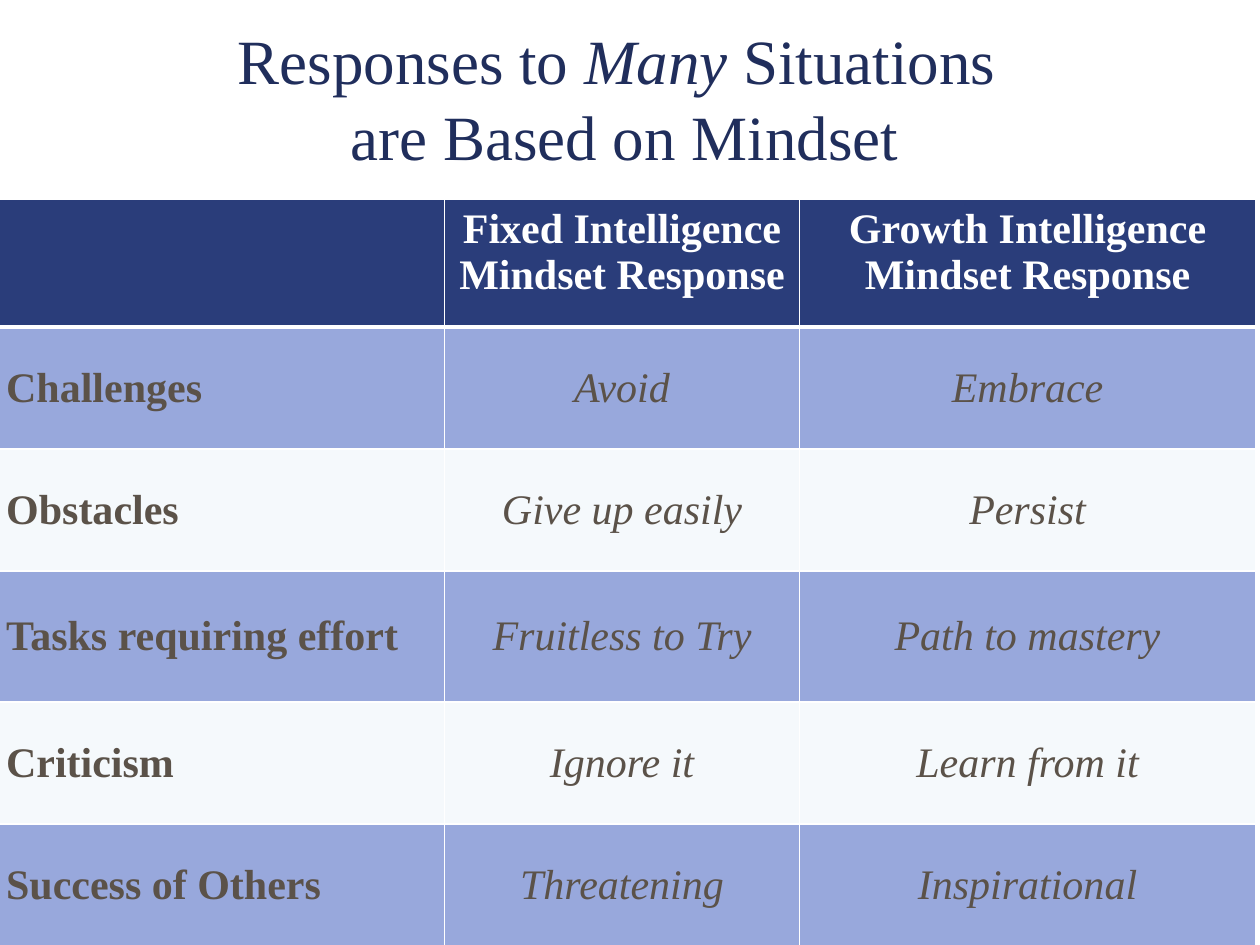
from lxml.etree import SubElement
from pptx import Presentation
from pptx.dml.color import RGBColor
from pptx.enum.text import MSO_ANCHOR, PP_ALIGN
from pptx.oxml.ns import qn
from pptx.util import Cm, Pt

COLORS = {
    "title": "202E5C",
    "header": "2A3D7A",
    "band": "98A8DC",
    "plain": "F5F9FC",
    "body": "5B5249",
    "white": "FFFFFF",
}
FONT = "Times New Roman"
LEFT, WIDTH = Cm(-0.13), Cm(25.44)
COLUMN_WIDTHS = [9.09, 7.16, 9.19]
ROW_HEIGHTS = [2.57, 2.46, 2.46, 2.64, 2.46, 2.46]
ROWS = [
    ("", "Fixed Intelligence Mindset Response", "Growth Intelligence Mindset Response"),
    ("Challenges", "Avoid", "Embrace"),
    ("Obstacles", "Give up easily", "Persist"),
    ("Tasks requiring effort", "Fruitless to Try", "Path to mastery"),
    ("Criticism", "Ignore it", "Learn from it"),
    ("Success of Others", "Threatening", "Inspirational"),
]


def style_font(font, size, color, bold=False, italic=False):
    font.name = FONT
    font.size = Pt(size)
    font.bold = bold
    font.italic = italic
    font.color.rgb = RGBColor.from_string(COLORS[color])


def add_title(slide):
    box = slide.shapes.add_textbox(LEFT, Cm(0.45), WIDTH, Cm(3.05))
    frame = box.text_frame
    frame.word_wrap = True
    frame.margin_top = frame.margin_bottom = 0
    para = frame.paragraphs[0]
    para.alignment = PP_ALIGN.CENTER
    para.line_spacing = Pt(43)
    for text in ("Responses to ", "Many", " Situations ", "are Based on Mindset"):
        if text.startswith("are"):
            para.add_line_break()
        span = para.add_run()
        span.text = text
        style_font(span.font, 36, "title", italic=text == "Many")


def set_borders(cell, top, bottom):
    """Draw white cell edges; top and bottom are widths in points."""
    properties = cell._tc.get_or_add_tcPr()
    for tag, points in (("lnL", 1), ("lnR", 1), ("lnT", top), ("lnB", bottom)):
        line = SubElement(properties, qn(f"a:{tag}"), w=str(Pt(points)))
        fill = SubElement(line, qn("a:solidFill"))
        SubElement(fill, qn("a:srgbClr"), val=COLORS["white"])


def fill_cell(cell, text, row, column):
    is_header = row == 0
    set_borders(cell, top=3 if row == 1 else 1, bottom=3 if is_header else 1)
    fill_name = "header" if is_header else "band" if row % 2 else "plain"
    cell.fill.solid()
    cell.fill.fore_color.rgb = RGBColor.from_string(COLORS[fill_name])
    cell.vertical_anchor = MSO_ANCHOR.TOP if is_header else MSO_ANCHOR.MIDDLE
    cell.text_frame.text = text
    para = cell.text_frame.paragraphs[0]
    para.alignment = PP_ALIGN.CENTER if column else PP_ALIGN.LEFT
    is_bold = is_header or column == 0
    for span in para.runs:
        style_font(span.font, 24, "white" if is_header else "body",
                   bold=is_bold, italic=not is_bold)


def add_mindset_table(slide):
    table = slide.shapes.add_table(
        len(ROWS), len(COLUMN_WIDTHS), LEFT, Cm(4.02), WIDTH, Cm(sum(ROW_HEIGHTS))
    ).table
    for column, width in zip(table.columns, COLUMN_WIDTHS):
        column.width = Cm(width)
    for row, height in zip(table.rows, ROW_HEIGHTS):
        row.height = Cm(height)
    for row, texts in enumerate(ROWS):
        for column, text in enumerate(texts):
            fill_cell(table.cell(row, column), text, row, column)


def main():
    deck = Presentation()
    deck.slide_width, deck.slide_height = Cm(25.4), Cm(19.05)
    slide = deck.slides.add_slide(deck.slide_layouts[6])
    add_title(slide)
    add_mindset_table(slide)
    deck.save("out.pptx")


if __name__ == "__main__":
    main()
